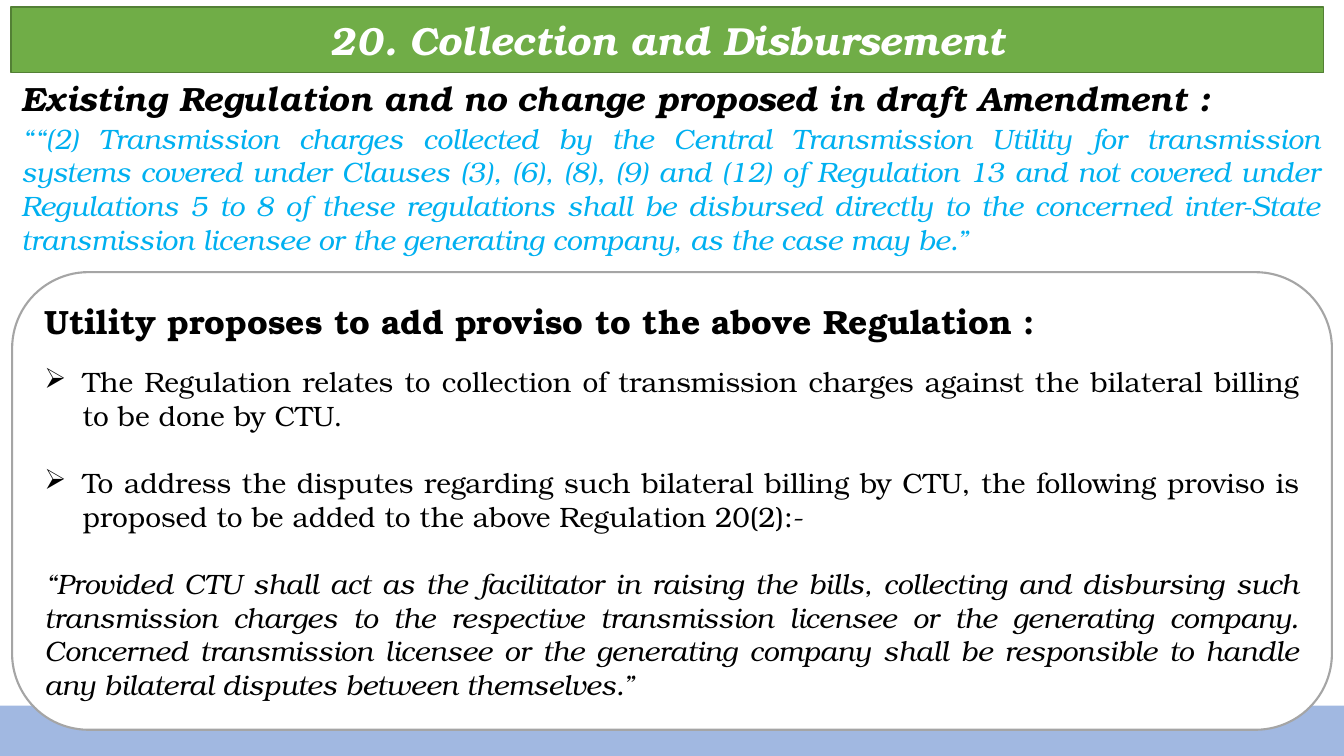
from dataclasses import dataclass

from lxml.etree import SubElement
from pptx import Presentation
from pptx.dml.color import RGBColor
from pptx.enum.shapes import MSO_SHAPE
from pptx.enum.text import MSO_ANCHOR, MSO_AUTO_SIZE, PP_ALIGN
from pptx.oxml import parse_xml
from pptx.oxml.ns import nsdecls, qn
from pptx.util import Inches, Pt

SLIDE_WIDTH, SLIDE_HEIGHT = Inches(13.33), Inches(7.5)
COLUMNS = ROWS = 100


@dataclass(frozen=True)
class Theme:
    font: str = "TeX Gyre Bonum"
    ink: str = "000000"
    paper: str = "FFFFFF"
    quote: str = "00B0F0"
    banner: str = "70AD47"
    banner_edge: str = "538035"
    panel_edge: str = "A5A5A5"
    footer: str = "4472C4"
    title_size: int = 28
    heading_size: int = 24
    body_size: int = 20


THEME = Theme()


def grid(column, row, columns, rows):
    """Turn grid cells into left, top, width and height."""
    across, down = SLIDE_WIDTH / COLUMNS, SLIDE_HEIGHT / ROWS
    return (int(column * across), int(row * down),
            int(columns * across), int(rows * down))


def paint(shape, fill, edge=None, weight=1):
    shape.fill.solid()
    shape.fill.fore_color.rgb = RGBColor.from_string(fill)
    if edge:
        shape.line.color.rgb = RGBColor.from_string(edge)
        shape.line.width = Pt(weight)
    else:
        shape.line.fill.background()


def prepare_frame(frame, anchor):
    frame.word_wrap = True
    frame.auto_size = MSO_AUTO_SIZE.NONE
    frame.vertical_anchor = anchor
    frame.margin_left = frame.margin_right = Inches(0.1)
    frame.margin_top = frame.margin_bottom = Inches(0.05)


def write(frame, text, size, color=THEME.ink, bold=False, italic=False,
          align=PP_ALIGN.JUSTIFY, after=0):
    """Fill the frame's first paragraph, or add one after it."""
    paragraph = frame.add_paragraph() if frame.text else frame.paragraphs[0]
    paragraph.text = text
    paragraph.alignment = align
    paragraph.space_after = Pt(after)
    font = paragraph.font
    font.name, font.size = THEME.font, Pt(size)
    font.bold, font.italic = bold, italic
    font.color.rgb = RGBColor.from_string(color)
    return paragraph


def add_bullet(paragraph, indent=Inches(0.38)):
    properties = paragraph._p.get_or_add_pPr()
    properties.set("marL", str(indent))
    properties.set("indent", str(-indent))
    bullet = parse_xml(f'<a:buChar {nsdecls("a")} char="➢"/>')
    properties.insert_element_before(bullet, "a:tabLst", "a:defRPr", "a:extLst")


def add_block(slide, preset, cells, fill, edge=None, weight=1):
    block = slide.shapes.add_shape(preset, *grid(*cells))
    block.shadow.inherit = False
    paint(block, fill, edge, weight)
    return block


def add_footer_band(slide):
    band = add_block(slide, MSO_SHAPE.RECTANGLE, (0, 93.33, 100, 6.67), THEME.footer)
    tint = band.fill._xPr.find(f'{qn("a:solidFill")}/{qn("a:srgbClr")}')
    SubElement(tint, qn("a:alpha"), val="50000")


def add_banner(slide, text):
    """Shape the title placeholder as a rounded banner."""
    banner = slide.shapes.title
    banner.left, banner.top, banner.width, banner.height = grid(0.83, 0.93, 97.67, 8.67)
    outline = parse_xml(f'<a:prstGeom {nsdecls("a")} prst="roundRect"><a:avLst/></a:prstGeom>')
    banner._element.spPr.find(qn("a:xfrm")).addnext(outline)
    paint(banner, THEME.banner, THEME.banner_edge)
    prepare_frame(banner.text_frame, MSO_ANCHOR.MIDDLE)
    write(banner.text_frame, text, THEME.title_size, THEME.paper,
          bold=True, italic=True, align=PP_ALIGN.CENTER)


def add_regulation(slide, heading, quote):
    frame = slide.shapes.add_textbox(*grid(0.83, 9.6, 98.2, 25.07)).text_frame
    prepare_frame(frame, MSO_ANCHOR.TOP)
    write(frame, heading, THEME.heading_size, bold=True, italic=True, after=2.4)
    write(frame, quote, THEME.body_size, THEME.quote, italic=True)


def add_proposal(slide, heading, reasons, proviso):
    panel = add_block(slide, MSO_SHAPE.ROUNDED_RECTANGLE, (0.9, 36, 98.2, 60.53),
                      THEME.paper, THEME.panel_edge, 1.5)
    frame = panel.text_frame
    prepare_frame(frame, MSO_ANCHOR.MIDDLE)
    write(frame, heading, THEME.heading_size, bold=True,
          align=PP_ALIGN.LEFT, after=16.8)
    for reason in reasons:
        add_bullet(write(frame, reason, THEME.body_size, after=24))
    write(frame, proviso, THEME.body_size, italic=True)


def main():
    deck = Presentation()
    deck.slide_width, deck.slide_height = SLIDE_WIDTH, SLIDE_HEIGHT
    slide = deck.slides.add_slide(deck.slide_layouts.get_by_name("Title Only"))
    add_footer_band(slide)
    add_banner(slide, "20. Collection and Disbursement")
    add_regulation(
        slide,
        "Existing Regulation and no change proposed in draft Amendment :",
        "““(2) Transmission charges collected by the Central Transmission Utility "
        "for transmission systems covered under Clauses (3), (6), (8), (9) and (12) "
        "of Regulation 13 and not covered under Regulations 5 to 8 of these "
        "regulations shall be disbursed directly to the concerned inter-State "
        "transmission licensee or the generating company, as the case may be.”",
    )
    add_proposal(
        slide,
        "Utility proposes to add proviso to the above Regulation :",
        ["The Regulation relates to collection of transmission charges against "
         "the bilateral billing to be done by CTU.",
         "To address the disputes regarding such bilateral billing by CTU, the "
         "following proviso is proposed to be added to the above Regulation 20(2):-"],
        "“Provided CTU shall act as the facilitator in raising the bills, collecting "
        "and disbursing such transmission charges to the respective transmission "
        "licensee or the generating company. Concerned transmission licensee or the "
        "generating company shall be responsible to handle any bilateral disputes "
        "between themselves.”",
    )
    deck.save("out.pptx")


if __name__ == "__main__":
    main()
